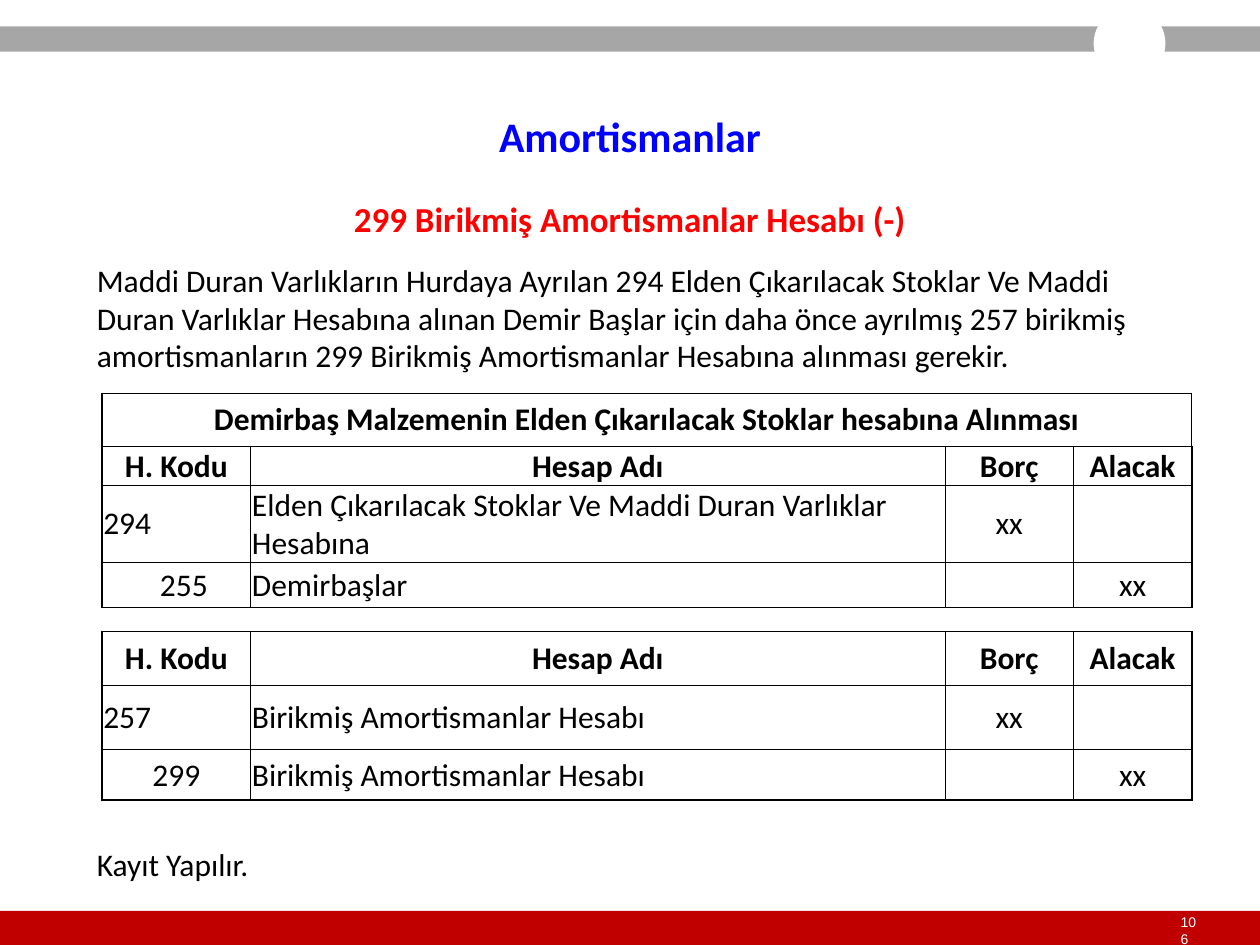
from dataclasses import dataclass

from lxml.etree import SubElement
from pptx import Presentation
from pptx.dml.color import RGBColor
from pptx.enum.shapes import MSO_SHAPE
from pptx.enum.text import MSO_ANCHOR, PP_ALIGN
from pptx.oxml.ns import qn
from pptx.util import Inches, Pt

COLORS = {
    "white": "FFFFFF", "black": "000000", "gray": "A6A6A6",
    "crimson": "C00000", "red": "FF0000", "blue": "0000FF",
}
COLUMN_WIDTHS = (1.18, 5.51, 1.02, 0.94)
HEADINGS = ("H. Kodu", "Hesap Adı", "Borç", "Alacak")


@dataclass(frozen=True)
class Style:
    size: float = 18
    color: str = "black"
    bold: bool = False
    font: str = "Calibri"
    align: PP_ALIGN = PP_ALIGN.LEFT


@dataclass(frozen=True)
class Box:
    left: float
    top: float
    width: float
    height: float

    def lengths(self) -> tuple:
        return tuple(Inches(n) for n in (self.left, self.top, self.width, self.height))


@dataclass(frozen=True)
class Ledger:
    top: float
    heights: tuple
    rows: tuple
    credit_indent: float


HEADING = Style(bold=True, align=PP_ALIGN.CENTER)
BODY = Style()
AMOUNT = Style(align=PP_ALIGN.CENTER)


def rgb(name: str) -> RGBColor:
    return RGBColor.from_string(COLORS[name])


def write(frame, text: str, style: Style) -> None:
    paragraph = frame.paragraphs[0]
    paragraph.text = text
    paragraph.alignment = style.align
    paragraph.font.size = Pt(style.size)
    paragraph.font.bold = style.bold
    paragraph.font.name = style.font
    paragraph.font.color.rgb = rgb(style.color)


def add_block(slide, kind: MSO_SHAPE, box: Box, color: str):
    shape = slide.shapes.add_shape(kind, *box.lengths())
    shape.shadow.inherit = False
    shape.fill.solid()
    shape.fill.fore_color.rgb = rgb(color)
    shape.line.fill.background()
    return shape


def add_text(slide, box: Box, text: str, style: Style):
    frame = slide.shapes.add_textbox(*box.lengths()).text_frame
    frame.word_wrap = True
    write(frame, text, style)
    return frame


def set_borders(cell, widths: dict) -> None:
    properties = cell._tc.get_or_add_tcPr()
    for index, (side, width) in enumerate(widths.items()):
        line = SubElement(properties, qn(f"a:ln{side}"), w=str(Pt(width)))
        fill = SubElement(line, qn("a:solidFill"))
        SubElement(fill, qn("a:srgbClr"), val=COLORS["black"])
        properties.insert(index, line)


def add_ledger(slide, ledger: Ledger) -> None:
    last_row, last_column = len(ledger.rows) - 1, len(COLUMN_WIDTHS) - 1
    box = Box(0.81, ledger.top, sum(COLUMN_WIDTHS), sum(ledger.heights))
    table = slide.shapes.add_table(last_row + 1, last_column + 1, *box.lengths()).table
    table.first_row = table.horz_banding = False
    for column, width in zip(table.columns, COLUMN_WIDTHS):
        column.width = Inches(width)
    for row, height in zip(table.rows, ledger.heights):
        row.height = Inches(height)
    for r, texts in enumerate(ledger.rows):
        for c, text in enumerate(texts):
            cell = table.cell(r, c)
            cell.fill.background()
            cell.vertical_anchor = MSO_ANCHOR.MIDDLE
            cell.margin_left = cell.margin_right = cell.margin_top = Inches(0.01)
            cell.margin_bottom = Inches(0)
            style = HEADING if r < last_row - 1 else AMOUNT if c > 1 else BODY
            write(cell.text_frame, text, style)
            set_borders(cell, {
                "L": 1 if c == 0 else 0.5,
                "R": 1 if c == last_column else 0.5,
                "T": 0.5,
                "B": 1 if r == last_row else 0.5,
            })
    if not any(ledger.rows[0][1:]):
        table.cell(0, 0).merge(table.cell(0, last_column))
    credit_code = table.cell(last_row, 0).text_frame.paragraphs[0]
    credit_code._p.get_or_add_pPr().set("marL", str(Inches(ledger.credit_indent)))


def main() -> None:
    """Build the slide on accumulated depreciation entries."""
    presentation = Presentation()
    presentation.slide_width, presentation.slide_height = Inches(10), Inches(7.5)
    slide = presentation.slides.add_slide(presentation.slide_layouts[6])

    add_block(slide, MSO_SHAPE.RECTANGLE, Box(0, 7.23, 10, 0.3), "crimson")
    number = add_text(slide, Box(9.37, 7.32, 0.14, 0.13), "106",
                      Style(8, "white", font="Arial"))
    number.margin_left = number.margin_right = Inches(0)
    number.margin_top = number.margin_bottom = Inches(0)
    number.vertical_anchor = MSO_ANCHOR.MIDDLE
    add_block(slide, MSO_SHAPE.RECTANGLE, Box(0, 0.21, 10, 0.2), "gray")
    add_block(slide, MSO_SHAPE.OVAL, Box(8.68, 0.06, 0.57, 0.57), "white")

    add_text(slide, Box(0, 1.52, 10, 0.44), "299 Birikmiş Amortismanlar Hesabı (-)",
             Style(20, "red", True, align=PP_ALIGN.CENTER))
    add_ledger(slide, Ledger(5.01, (0.43, 0.51, 0.4), (
        HEADINGS,
        ("257", "Birikmiş Amortismanlar Hesabı", "xx", ""),
        ("299", "Birikmiş Amortismanlar Hesabı", "", "xx"),
    ), 0.39))
    add_text(slide, Box(0.67, 2.02, 8.66, 1.01),
             "Maddi Duran Varlıkların Hurdaya Ayrılan 294 Elden Çıkarılacak Stoklar Ve "
             "Maddi Duran Varlıklar Hesabına alınan Demir Başlar için daha önce ayrılmış "
             "257 birikmiş amortismanların 299 Birikmiş Amortismanlar Hesabına alınması "
             "gerekir.", BODY)
    add_text(slide, Box(0.67, 6.66, 8.66, 0.4), "Kayıt Yapılır.", BODY)
    add_ledger(slide, Ledger(3.12, (0.42, 0.31, 0.61, 0.36), (
        ("Demirbaş Malzemenin Elden Çıkarılacak Stoklar hesabına Alınması", "", "", ""),
        HEADINGS,
        ("294", "Elden Çıkarılacak Stoklar Ve Maddi Duran Varlıklar Hesabına", "xx", ""),
        ("255", "Demirbaşlar", "", "xx"),
    ), 0.45))

    title = add_block(slide, MSO_SHAPE.RECTANGLE, Box(0, 0.88, 10, 0.39), "white")
    title.text_frame.vertical_anchor = MSO_ANCHOR.MIDDLE
    write(title.text_frame, "Amortismanlar",
          Style(24, "blue", True, align=PP_ALIGN.CENTER))

    presentation.save("out.pptx")


if __name__ == "__main__":
    main()
